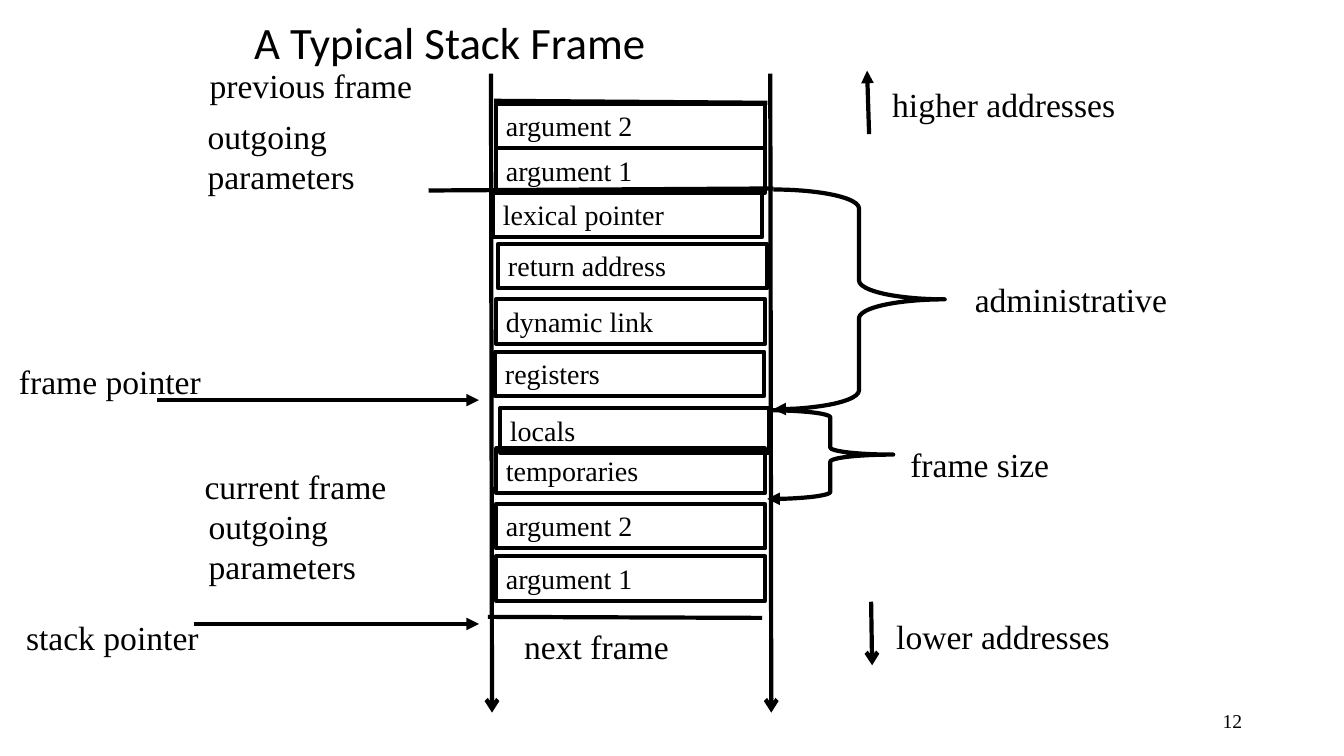
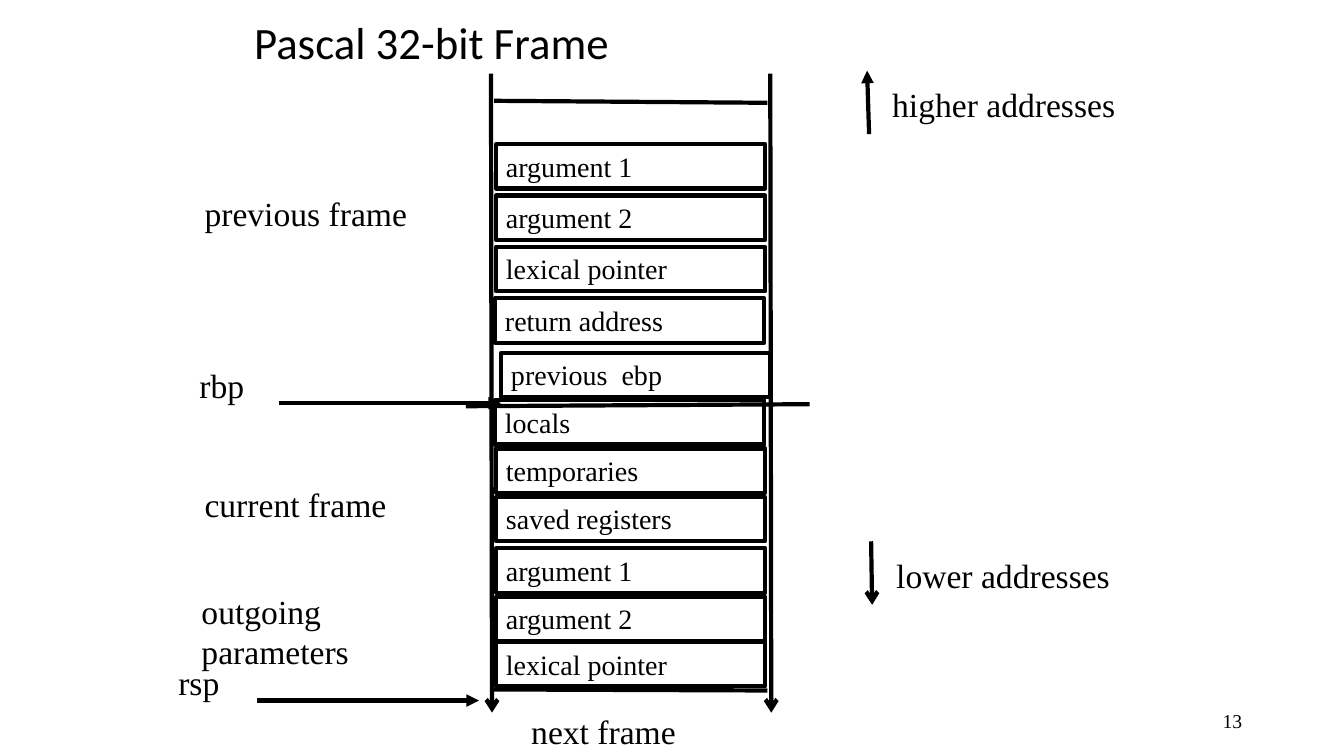
from pptx import Presentation
from pptx.dml.color import RGBColor
from pptx.enum import shapes, text
from pptx.oxml.ns import qn
from pptx.util import Inches, Pt
from lxml import etree

BLACK = RGBColor(0x00, 0x00, 0x00)
SERIF = "Times New Roman"
SANS = "Calibri"
COL = 4.92


def write(frame, words, size=24, font=SERIF, align=text.PP_ALIGN.LEFT,
          anchor=text.MSO_ANCHOR.TOP, fit=text.MSO_AUTO_SIZE.SHAPE_TO_FIT_TEXT,
          space=None):
    frame.word_wrap = True
    frame.auto_size = fit
    frame.vertical_anchor = anchor
    para = frame.paragraphs[0]
    para.alignment = align
    para.line_spacing = space
    run = para.add_run()
    run.text = words
    run.font.size = Pt(size)
    run.font.name = font
    run.font.color.rgb = BLACK


class Deck:
    """Holds the style of the stack diagrams and the current slide."""

    def __init__(self):
        self.file = Presentation()
        self.file.slide_width = Inches(13.33)
        self.file.slide_height = Inches(7.5)
        self.slide = None

    def start(self, title, number):
        self.slide = self.file.slides.add_slide(self.file.slide_layouts[5])
        head = self.slide.shapes.title
        head.left, head.top = Inches(2.42), Inches(-0.18)
        head.width, head.height = Inches(8.5), Inches(1.25)
        write(head.text_frame, title, size=32, font=SANS, space=0.9,
              anchor=text.MSO_ANCHOR.MIDDLE, fit=text.MSO_AUTO_SIZE.NONE)
        self.label(number, 9.42, 6.95, 3, 0.4, size=14,
                   align=text.PP_ALIGN.RIGHT, anchor=text.MSO_ANCHOR.MIDDLE,
                   fit=text.MSO_AUTO_SIZE.NONE)

    def stroke(self, item, tip=None):
        item.line.color.rgb = BLACK
        item.line.width = Pt(3)
        if tip:
            line = item.line._get_or_add_ln()
            etree.SubElement(line, qn("a:tailEnd")).set("type", tip)

    def line(self, x1, y1, x2, y2, tip=None):
        link = self.slide.shapes.add_connector(
            shapes.MSO_CONNECTOR.STRAIGHT,
            Inches(x1), Inches(y1), Inches(x2), Inches(y2))
        self.stroke(link, tip)
        etree.SubElement(link._element.spPr, qn("a:effectLst"))

    def shape(self, kind, x, y, w, h, tip=None):
        item = self.slide.shapes.add_shape(
            kind, Inches(x), Inches(y), Inches(w), Inches(h))
        item.fill.background()
        self.stroke(item, tip)
        item.shadow.inherit = False
        return item

    def cell(self, words, y, x=COL):
        box = self.shape(shapes.MSO_SHAPE.RECTANGLE, x, y, 2.67, 0.44)
        write(box.text_frame, words, size=20)

    def brace(self, x, y, w, h, curve):
        item = self.shape(shapes.MSO_SHAPE.RIGHT_BRACE, x, y, w, h, "triangle")
        item.adjustments[0] = curve
        item.adjustments[1] = 0.5

    def label(self, words, x, y, w=2.45, h=0.5, **style):
        box = self.slide.shapes.add_textbox(
            Inches(x), Inches(y), Inches(w), Inches(h))
        write(box.text_frame, words, **style)

    def stack(self, cells, low):
        for x in (4.87, 7.64):
            self.line(x, 0.73, x + 0.01, 7.07, "arrow")
        self.line(4.9, 1, 7.61, 1.02)
        for cell in cells:
            self.cell(*cell)
        self.line(8.62, 1.33, 8.6, 0.7, "triangle")
        self.label("higher addresses", 8.75, 0.78)
        self.line(8.64, low, 8.65, low + 0.63, "arrow")
        self.label("lower addresses", 8.79, low + 0.09)

    def point(self, words, x, y, w, h, start, level, end=4.75):
        self.line(start, level, end, level, "triangle")
        self.label(words, x, y, w, h)


def general(deck):
    deck.start("A Typical Stack Frame", "12")
    deck.stack([
        ("argument 2", 1.03),
        ("argument 1", 1.47),
        ("lexical pointer", 1.91, 4.89),
        ("return address", 2.42, 4.94),
        ("dynamic link", 2.97),
        ("registers", 3.49, 4.91),
        ("locals", 4.05, 4.96),
        ("temporaries", 4.45),
        ("argument 2", 5),
        ("argument 1", 5.52),
    ], low=5.97)
    deck.line(4.25, 1.89, 7.67, 1.87)
    deck.line(4.84, 6.12, 7.56, 6.13)
    deck.label("previous frame", 1.98, 0.59)
    deck.label("outgoing parameters", 1.96, 1.1, h=0.91)
    deck.label("current frame", 1.93, 4.57)
    deck.label("outgoing parameters", 1.97, 4.97, h=0.91)
    deck.label("next frame", 5.1, 6.16)
    deck.point("frame pointer", 0.09, 3.53, 2.1, 0.91, 1.56, 3.97)
    deck.point("stack pointer", 0.16, 6.07, 2.21, 0.51, 1.92, 6.19)
    deck.brace(7.67, 1.88, 1.7, 2.18, 0.11)
    deck.label("administrative", 9.57, 2.72, 2.24)
    deck.brace(7.61, 4.07, 1.25, 0.88, 0.08)
    deck.label("frame size", 8.93, 4.35, 1.65)


def pascal(deck):
    deck.start("Pascal 32-bit Frame", "13")
    deck.stack([
        ("argument 1", 1.43),
        ("argument 2", 1.94),
        ("lexical pointer", 2.45),
        ("return address", 2.96, 4.91),
        ("previous  ebp", 3.5, 4.97),
        ("locals", 3.97, 4.91),
        ("temporaries", 4.45),
        ("saved registers", 4.93),
        ("argument 1", 5.44),
        ("argument 2", 5.92),
        ("lexical pointer", 6.37),
    ], low=5.37)
    deck.line(4.62, 4.03, 8.03, 4.01)
    deck.line(4.9, 6.84, 7.61, 6.85)
    deck.label("previous frame", 1.93, 1.86)
    deck.label("current frame", 1.93, 4.75)
    deck.label("outgoing parameters", 1.9, 5.81, h=0.91)
    deck.label("next frame", 5.17, 7)
    deck.point("rbp", 1.88, 3.57, 1.45, 0.5, 2.77, 4, end=4.97)
    deck.point("rsp", 1.67, 6.52, 1.45, 0.5, 2.55, 6.95)


def main():
    deck = Deck()
    general(deck)
    pascal(deck)
    deck.file.save("out.pptx")


if __name__ == "__main__":
    main()
